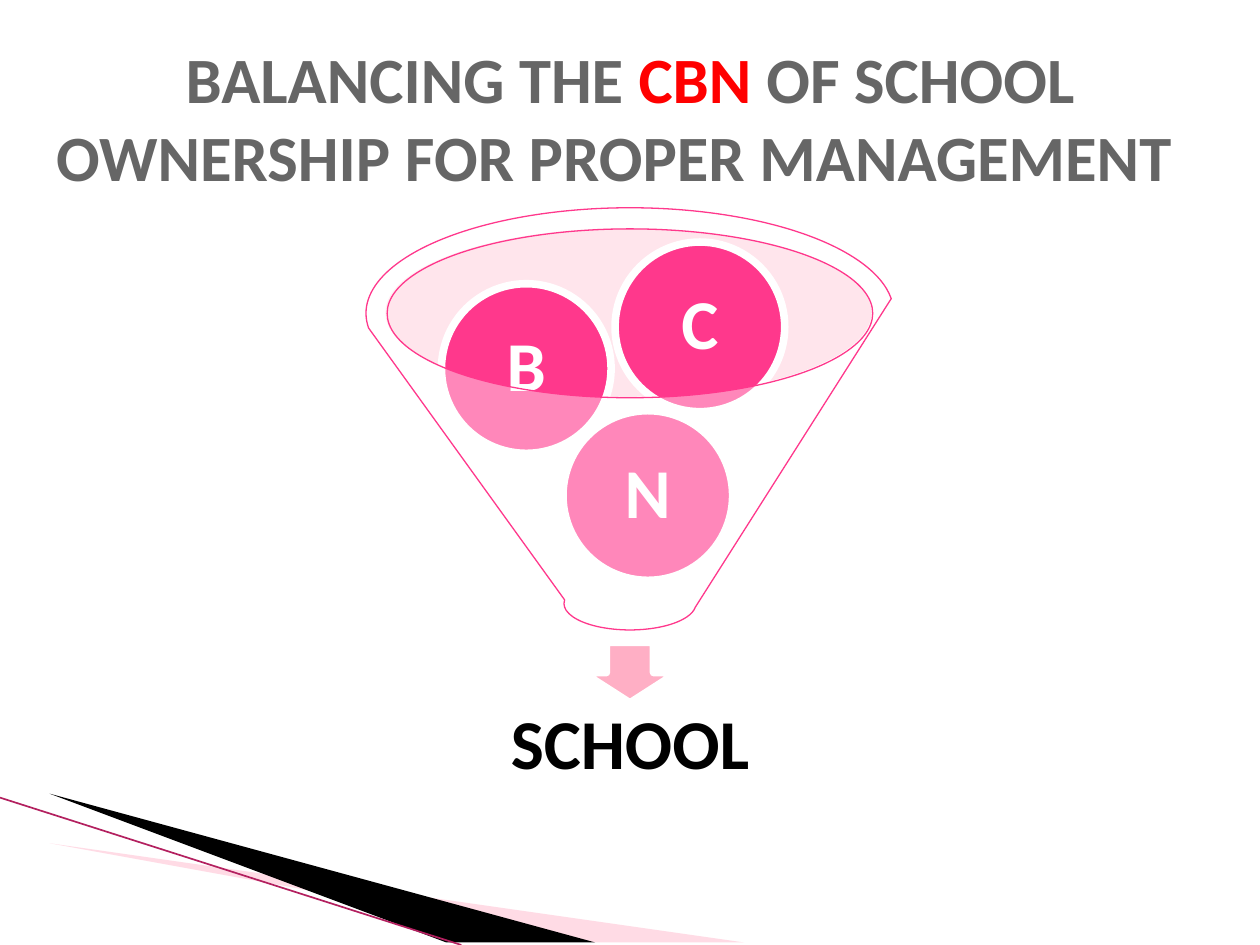
from lxml import etree
from pptx import Presentation
from pptx.dml.color import RGBColor
from pptx.enum.shapes import MSO_CONNECTOR, MSO_SHAPE
from pptx.enum.text import MSO_ANCHOR, PP_ALIGN
from pptx.oxml.ns import qn
from pptx.util import Cm, Pt

WHITE = RGBColor(0xFF, 0xFF, 0xFF)
BLACK = RGBColor(0, 0, 0)
GREY = RGBColor(0x66, 0x66, 0x66)
RED = RGBColor(0xFF, 0, 0)
PINK = RGBColor(0xFF, 0x38, 0x8C)
ROSE = RGBColor(0xFF, 0xAF, 0xC5)
PALE = RGBColor(0xFF, 0xBF, 0xD0)
SWOOSH = RGBColor(0xFF, 0xA5, 0xBF)
EDGE = RGBColor(0xB3, 0x20, 0x5F)


def paint(shape, fill, alpha=100, line=None, width=0.75):
    """Set fill, opacity in percent, and outline."""
    shape.shadow.inherit = False
    shape.fill.solid()
    shape.fill.fore_color.rgb = fill
    if alpha < 100:
        tint = shape.fill._xPr.find(qn("a:solidFill"))[0]
        etree.SubElement(tint, qn("a:alpha"), val=str(alpha * 1000))
    if line is None:
        shape.line.fill.background()
    else:
        shape.line.color.rgb = line
        shape.line.width = Pt(width)


def write(shape, runs, size, inset, space=1.0):
    """Fill a shape with one centred bold paragraph."""
    frame = shape.text_frame
    frame.word_wrap = True
    frame.vertical_anchor = MSO_ANCHOR.MIDDLE
    frame.margin_left = frame.margin_right = Cm(inset)
    frame.margin_top = frame.margin_bottom = Cm(inset)
    para = frame.paragraphs[0]
    para.alignment = PP_ALIGN.CENTER
    para.line_spacing = space
    for text, tone in runs:
        run = para.add_run()
        run.text = text
        run.font.name = "Calibri"
        run.font.size = Pt(size)
        run.font.bold = True
        run.font.color.rgb = tone
    return para


deck = Presentation()
deck.slide_width, deck.slide_height = Cm(25.4), Cm(19.05)
slide = deck.slides.add_slide(deck.slide_layouts[6])
shapes = slide.shapes

# Corner wedges
for points, tone, alpha in (
    ([(1.4, 16.54), (15.11, 19.05), (11.58, 19.05)], SWOOSH, 40),
    ([(1.35, 16.48), (11.55, 19.05), (9.4, 19.05)], BLACK, 100),
):
    path = shapes.build_freeform(*points[0], scale=Cm(1))
    path.add_line_segments(points[1:], close=True)
    paint(path.convert_to_shape(), tone, alpha)

# Corner edge
edge = shapes.add_connector(
    MSO_CONNECTOR.STRAIGHT, Cm(0), Cm(16.08), Cm(9.3), Cm(19.05))
edge.line.color.rgb = EDGE
edge.line.width = Pt(0.95)
etree.SubElement(edge._element.spPr, qn("a:effectLst"))

# Title, its second line set slightly to the left
title = shapes.add_textbox(Cm(0.79), Cm(0.76), Cm(23.83), Cm(3.18))
para = write(title, [
    ("BALANCING THE ", GREY),
    ("CBN", RED),
    (" OF SCHOOL OWNERSHIP FOR PROPER MANAGEMENT", GREY),
], 36.9, 0.13)
shift = str(Cm(0.64))
para._p.get_or_add_pPr().set("marR", shift)
para._p.get_or_add_pPr().set("indent", shift)

# Funnel mouth
mouth = shapes.add_shape(
    MSO_SHAPE.OVAL, Cm(7.77), Cm(4.6), Cm(9.8), Cm(3.4))
paint(mouth, PALE, 40)

# Arrow and result
arrow = shapes.add_shape(
    MSO_SHAPE.DOWN_ARROW, Cm(11.75), Cm(12.95), Cm(1.9), Cm(1.22))
paint(arrow, ROSE, line=WHITE, width=4.33)
label = shapes.add_textbox(Cm(8.14), Cm(13.92), Cm(9.12), Cm(2.28))
write(label, [("SCHOOL", BLACK)], 40, 0.5, 0.9)

# Balls
for text, left, top in (("N", 11.35, 8.28), ("B", 8.9, 5.72), ("C", 12.4, 4.88)):
    ball = shapes.add_shape(
        MSO_SHAPE.OVAL, Cm(left), Cm(top), Cm(3.42), Cm(3.42))
    paint(ball, PINK, line=WHITE, width=4.33)
    write(ball, [(text, WHITE)], 40, 0.15, 0.9)

# Funnel over the balls
funnel = shapes.add_shape(
    MSO_SHAPE.FUNNEL, Cm(7.38), Cm(4.19), Cm(10.64), Cm(8.51))
paint(funnel, WHITE, 40, PINK)

deck.save("out.pptx")
